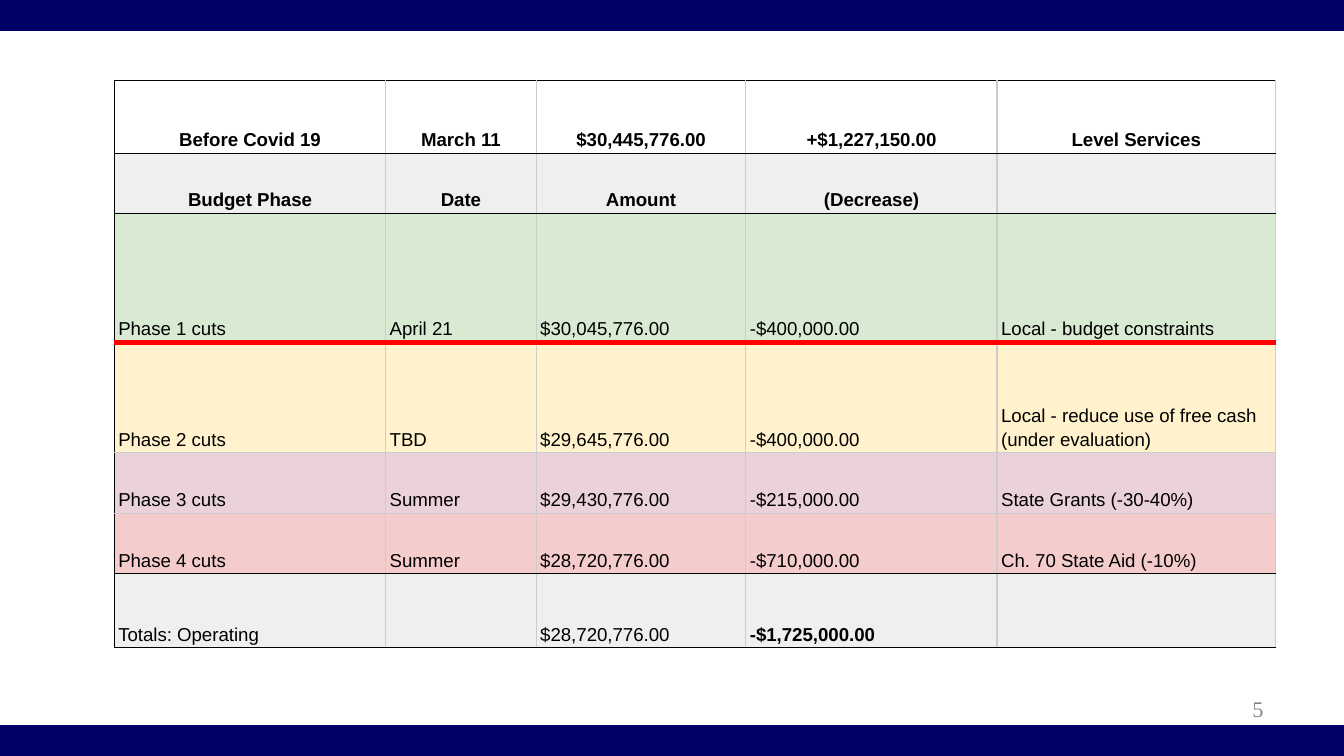
import pptx
import pptx.dml.color
import pptx.enum.shapes
import pptx.enum.text
import pptx.oxml
import pptx.oxml.ns
import pptx.util

Inches = pptx.util.Inches
Pt = pptx.util.Pt
RGBColor = pptx.dml.color.RGBColor
ALIGN = pptx.enum.text.PP_ALIGN
ANCHOR = pptx.enum.text.MSO_ANCHOR

NAVY = RGBColor(0x00, 0x00, 0x66)
BLACK = RGBColor(0x00, 0x00, 0x00)
WHITE = RGBColor(0xFF, 0xFF, 0xFF)
GRAY = RGBColor(0x88, 0x88, 0x88)
LIGHT_GRAY = RGBColor(0xEF, 0xEF, 0xEF)
RULE_GRAY = RGBColor(0xCC, 0xCC, 0xCC)
RED = RGBColor(0xFF, 0x00, 0x00)
GREEN = RGBColor(0xD9, 0xEA, 0xD3)
YELLOW = RGBColor(0xFF, 0xF2, 0xCC)
MAUVE = RGBColor(0xEA, 0xD1, 0xDC)
PINK = RGBColor(0xF4, 0xCC, 0xCC)

SLIDE_WIDTH = 10
SLIDE_HEIGHT = SLIDE_WIDTH * 9 / 16
BAND_HEIGHT = 0.22
COLUMN_WIDTHS = [2.02, 1.12, 1.56, 1.87, 2.07]
HEADER_ROWS = 2
THIN_BLACK, THIN_GRAY, THICK_RED = (BLACK, 0.75), (RULE_GRAY, 0.75), (RED, 3)

# Height, fill, rule below the row, cell texts
BUDGET_ROWS = [
    (0.54, WHITE, THIN_BLACK,
     ["Before Covid 19", "March 11", "$30,445,776.00", "+$1,227,150.00", "Level Services"]),
    (0.45, LIGHT_GRAY, THIN_BLACK,
     ["Budget Phase", "Date", "Amount", "(Decrease)", ""]),
    (0.96, GREEN, THICK_RED,
     ["Phase 1 cuts", "April 21", "$30,045,776.00", "-$400,000.00",
      "Local - budget constraints"]),
    (0.82, YELLOW, THIN_GRAY,
     ["Phase 2 cuts", "TBD", "$29,645,776.00", "-$400,000.00",
      "Local - reduce use of free cash (under evaluation)"]),
    (0.45, MAUVE, THIN_GRAY,
     ["Phase 3 cuts", "Summer", "$29,430,776.00", "-$215,000.00", "State Grants (-30-40%)"]),
    (0.45, PINK, THIN_BLACK,
     ["Phase 4 cuts", "Summer", "$28,720,776.00", "-$710,000.00", "Ch. 70 State Aid (-10%)"]),
    (0.55, LIGHT_GRAY, THIN_BLACK,
     ["Totals: Operating", "", "$28,720,776.00", "-$1,725,000.00", ""]),
]
BOLD_TOTAL = (len(BUDGET_ROWS) - 1, 3)


def write_text(frame, text, *, size=10, font="Arial", color=BLACK, bold=False,
               align=ALIGN.LEFT, spacing=1.0):
    frame.word_wrap = True
    para = frame.paragraphs[0]
    para.alignment = align
    para.line_spacing = spacing
    para.font.size = Pt(size)
    if text:
        span = para.add_run()
        span.text = text
        span.font.size = Pt(size)
        span.font.name = font
        span.font.bold = bold
        span.font.color.rgb = color


def set_borders(cell, **borders):
    """Draw cell borders given as L, R, T, B = (color, points), in that order."""
    properties = cell._tc.get_or_add_tcPr()
    for position, (side, (color, width)) in enumerate(borders.items()):
        line = pptx.oxml.parse_xml(
            f'<a:ln{side} {pptx.oxml.ns.nsdecls("a")} w="{int(Pt(width))}">'
            f'<a:solidFill><a:srgbClr val="{color}"/></a:solidFill></a:ln{side}>')
        properties.insert(position, line)


def add_band(slide, top):
    band = slide.shapes.add_shape(
        pptx.enum.shapes.MSO_SHAPE.RECTANGLE,
        Inches(0), Inches(top), Inches(SLIDE_WIDTH), Inches(BAND_HEIGHT))
    band.shadow.inherit = False
    band.fill.solid()
    band.fill.fore_color.rgb = NAVY
    band.line.color.rgb = NAVY
    band.line.width = Pt(2)


def add_budget_table(slide):
    heights = [row[0] for row in BUDGET_ROWS]
    table = slide.shapes.add_table(
        len(BUDGET_ROWS), len(COLUMN_WIDTHS), Inches(0.85), Inches(0.6),
        Inches(sum(COLUMN_WIDTHS)), Inches(sum(heights))).table
    table.first_row = table.horz_banding = False
    for column, width in zip(table.columns, COLUMN_WIDTHS):
        column.width = Inches(width)

    rule_above = THIN_BLACK
    for r, (height, fill, rule_below, texts) in enumerate(BUDGET_ROWS):
        table.rows[r].height = Inches(height)
        header = r < HEADER_ROWS
        for c, text in enumerate(texts):
            cell = table.cell(r, c)
            cell.fill.solid()
            cell.fill.fore_color.rgb = fill
            cell.vertical_anchor = ANCHOR.BOTTOM
            cell.margin_left = cell.margin_right = Inches(0.03)
            cell.margin_top = cell.margin_bottom = Inches(0.02)
            write_text(cell.text_frame, text, spacing=1.15,
                       bold=header or (r, c) == BOLD_TOTAL,
                       align=ALIGN.CENTER if header else ALIGN.LEFT)
            set_borders(cell, L=THIN_GRAY if c else THIN_BLACK, R=THIN_GRAY,
                        T=rule_above, B=rule_below)
        rule_above = rule_below


def add_page_number(slide, number):
    box = slide.shapes.add_textbox(Inches(7.17), Inches(5.12), Inches(2.33), Inches(0.3))
    box.text_frame.vertical_anchor = ANCHOR.MIDDLE
    write_text(box.text_frame, number, size=12, font="Times New Roman", color=GRAY,
               align=ALIGN.RIGHT)


def main():
    deck = pptx.Presentation()
    deck.slide_width = Inches(SLIDE_WIDTH)
    deck.slide_height = Inches(SLIDE_HEIGHT)
    slide = deck.slides.add_slide(deck.slide_layouts[6])
    for top in (0, SLIDE_HEIGHT - BAND_HEIGHT):
        add_band(slide, top)
    add_page_number(slide, "5")
    add_budget_table(slide)
    deck.save("out.pptx")


if __name__ == "__main__":
    main()
